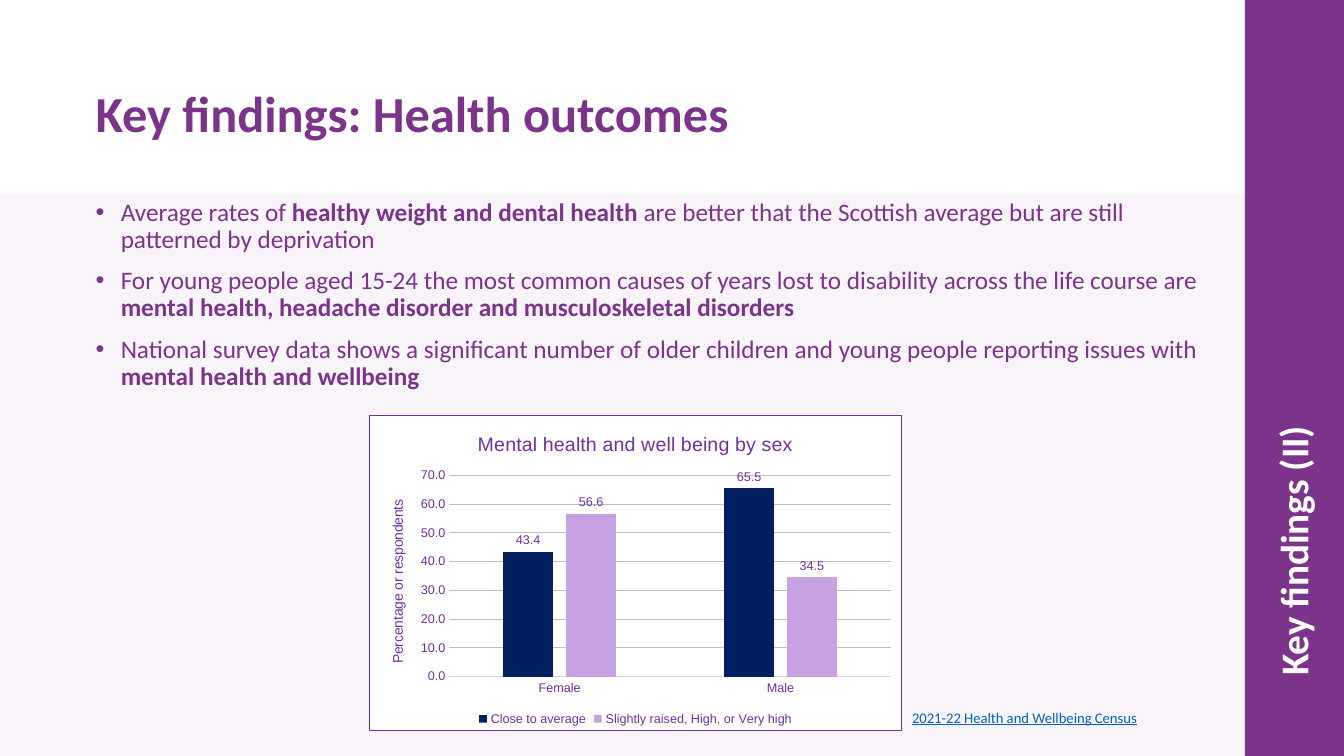
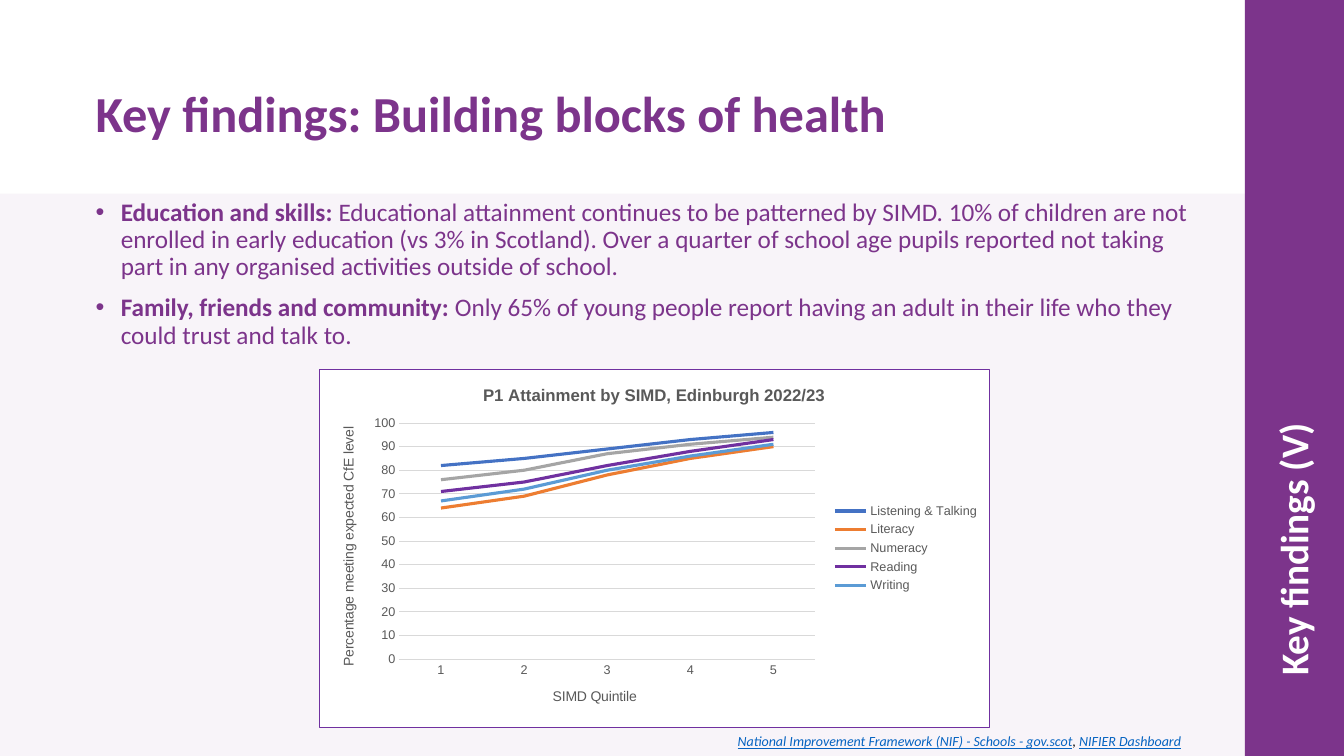
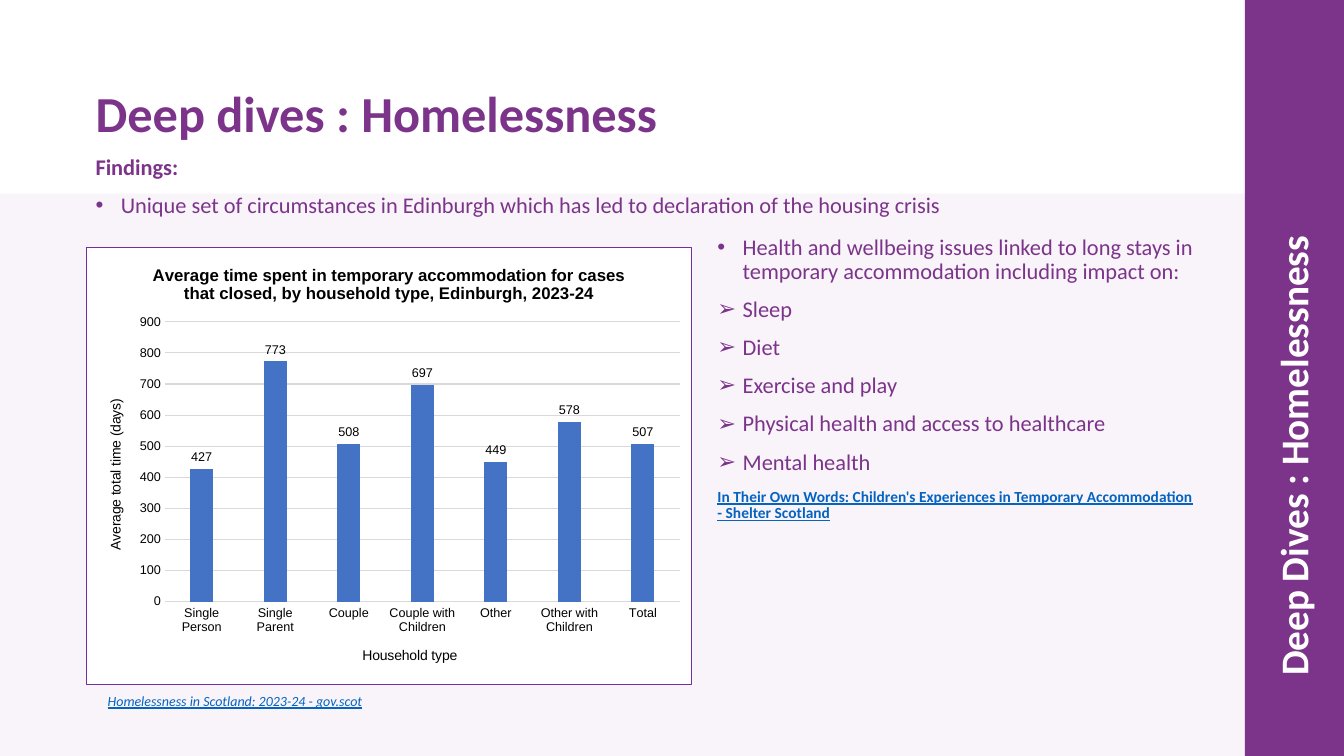
from lxml.etree import SubElement
from pptx import Presentation
from pptx.chart.data import CategoryChartData
from pptx.dml.color import RGBColor
from pptx.enum.chart import XL_CHART_TYPE, XL_LABEL_POSITION, XL_LEGEND_POSITION, XL_TICK_MARK
from pptx.enum.shapes import MSO_SHAPE
from pptx.oxml import parse_xml
from pptx.oxml.ns import nsdecls, qn
from pptx.util import Inches, Pt

PLUM = RGBColor(0x7C, 0x34, 0x8B)
VIOLET = RGBColor(0x70, 0x30, 0xA0)
LILAC = RGBColor(0xC7, 0xA2, 0xE3)
NAVY = RGBColor(0x00, 0x20, 0x60)
BLUE = RGBColor(0x44, 0x72, 0xC4)
SKY = RGBColor(0x5B, 0x9B, 0xD5)
ORANGE = RGBColor(0xED, 0x7D, 0x31)
LINK_BLUE = RGBColor(0x05, 0x63, 0xC1)
DARK_GREY = RGBColor(0x59, 0x59, 0x59)
GREY = RGBColor(0xA5, 0xA5, 0xA5)
MID_GREY = RGBColor(0xBF, 0xBF, 0xBF)
PALE_GREY = RGBColor(0xD9, 0xD9, 0xD9)
BLACK = RGBColor(0, 0, 0)
WHITE = RGBColor(255, 255, 255)

COLUMNS, ROWS = 80, 45
MARGIN = 5.1
BULLET_INDENT = Inches(0.25)


def style_font(font, size=18, color=PLUM, bold=False, italic=False, underline=False, face="Calibri"):
    font.name, font.size = face, Pt(size)
    font.bold, font.italic, font.underline = bold, italic, underline
    font.color.rgb = color


def write(paragraph, text, bold=False, **style):
    for index, part in enumerate(text.split("**")):
        if part:
            run = paragraph.add_run()
            run.text = part
            style_font(run.font, bold=bold or index % 2 == 1, **style)


class Deck:
    def __init__(self):
        self.presentation = Presentation()
        self.presentation.slide_width = Inches(13.33)
        self.presentation.slide_height = Inches(7.5)
        self.slide = None

    def place(self, column, row, columns, rows):
        across = self.presentation.slide_width / COLUMNS
        down = self.presentation.slide_height / ROWS
        return [round(n) for n in (column * across, row * down, columns * across, rows * down)]

    def start(self, title, section):
        self.slide = self.presentation.slides.add_slide(self.presentation.slide_layouts[6])
        self.band(74.1, 0, 5.9, 45)
        self.band(0, 11.52, 74.94, 33.48, opacity=5)
        self.text([title], MARGIN, 4.98, 64.62, 3.12, size=36, bold=True)
        side = self.text([section], 58.8, 21.12, 36.48, 2.94, size=28, color=WHITE, bold=True)
        side.rotation = 270

    def band(self, *area, opacity=100):
        band = self.slide.shapes.add_shape(MSO_SHAPE.RECTANGLE, *self.place(*area))
        band.shadow.inherit = False
        band.fill.solid()
        band.fill.fore_color.rgb = PLUM
        band.line.fill.background()
        if opacity < 100:
            color = band.element.spPr.find(".//" + qn("a:srgbClr"))
            SubElement(color, qn("a:alpha"), val=str(opacity * 1000))

    def frame(self, *area):
        box = self.slide.shapes.add_textbox(*self.place(*area))
        box.text_frame.word_wrap = True
        return box

    def text(self, lines, *area, **style):
        box = self.frame(*area)
        for index, line in enumerate(lines):
            paragraph = box.text_frame.add_paragraph() if index else box.text_frame.paragraphs[0]
            paragraph.line_spacing = 0.9
            if index:
                paragraph.space_before = Pt(10)
            line, line_style = line if isinstance(line, tuple) else (line, {})
            if line[0] in "•➢":
                properties = paragraph._p.get_or_add_pPr()
                properties.set("marL", str(BULLET_INDENT))
                properties.set("indent", str(-BULLET_INDENT))
                SubElement(properties, qn("a:buFont"), typeface="Arial")
                SubElement(properties, qn("a:buChar"), char=line[0])
                line = line[2:]
            write(paragraph, line, **{**style, **line_style})
        return box

    def sources(self, names, column, row, columns, size=10, italic=True):
        paragraph = self.frame(column, row, columns, 1.62).text_frame.paragraphs[0]
        for index, name in enumerate(names):
            if index:
                write(paragraph, ", ", size=size, color=BLACK, italic=italic)
            write(paragraph, name, size=size, color=LINK_BLUE, italic=italic, underline=True)

    def chart(self, kind, area, plot_area, title, categories, series, color,
              title_size=12, title_bold=True, value_title="", category_title="",
              number_format="General", grid=PALE_GREY, top=None, legend=None):
        data = CategoryChartData()
        data.categories = categories
        for name, values, _ in series:
            data.add_series(name, values)
        chart = self.slide.shapes.add_chart(kind, *self.place(*area), data).chart
        style_font(chart.font, size=10, color=color, face="Arial")
        chart.has_title = True
        write(chart.chart_title.text_frame.paragraphs[0], title,
              size=title_size, bold=title_bold, color=color, face="Arial")
        self.chart_area(chart, plot_area)
        self.axis(chart.category_axis, category_title, color)
        self.axis(chart.value_axis, value_title, color, turn=True)
        chart.category_axis.format.line.color.rgb = PALE_GREY
        values_axis = chart.value_axis
        values_axis.format.line.fill.background()
        values_axis.has_major_gridlines = True
        values_axis.major_gridlines.format.line.color.rgb = grid
        values_axis.major_gridlines.format.line.width = Pt(0.75)
        values_axis.tick_labels.number_format = number_format
        values_axis.tick_labels.number_format_is_linked = False
        if top:
            values_axis.minimum_scale, values_axis.maximum_scale = 0, top
        chart.has_legend = legend is not None
        if legend is not None:
            chart.legend.position = legend
            chart.legend.include_in_layout = False
            style_font(chart.legend.font, size=9, color=color, face="Arial")
        plot = chart.plots[0]
        plot.vary_by_categories = False
        if kind == XL_CHART_TYPE.LINE:
            for line, (_, _, shade) in zip(plot.series, series):
                line.smooth = False
                line.format.line.color.rgb = shade
                line.format.line.width = Pt(2.25)
            return
        plot.gap_width, plot.overlap = 219, -27
        for bars, (_, _, shade) in zip(plot.series, series):
            bars.format.fill.solid()
            bars.format.fill.fore_color.rgb = shade
        plot.has_data_labels = True
        labels = plot.data_labels
        labels.show_value = True
        labels.position = XL_LABEL_POSITION.OUTSIDE_END
        labels.number_format, labels.number_format_is_linked = number_format, False
        style_font(labels.font, size=9, color=color, face="Arial")

    def axis(self, axis, title, color, turn=False):
        axis.major_tick_mark = axis.minor_tick_mark = XL_TICK_MARK.NONE
        style_font(axis.tick_labels.font, size=9, color=color, face="Arial")
        axis.has_title = bool(title)
        if title:
            write(axis.axis_title.text_frame.paragraphs[0], title, size=10, color=color, face="Arial")
            if turn:
                body = axis.axis_title.element.find(".//" + qn("a:bodyPr"))
                body.set("rot", "-5400000")
                body.set("vert", "horz")

    def chart_area(self, chart, plot_area):
        chart.element.find(qn("c:chart")).addnext(parse_xml(
            f'<c:spPr {nsdecls("c", "a")}>'
            f'<a:solidFill><a:srgbClr val="{WHITE}"/></a:solidFill>'
            f'<a:ln w="{Pt(0.75)}"><a:solidFill><a:srgbClr val="{VIOLET}"/></a:solidFill></a:ln>'
            '</c:spPr>'))
        plot = chart.element.find(".//" + qn("c:plotArea"))
        for automatic in plot.findall(qn("c:layout")):
            plot.remove(automatic)
        layout = SubElement(plot, qn("c:layout"))
        plot.insert(0, layout)
        manual = SubElement(layout, qn("c:manualLayout"))
        settings = [("layoutTarget", "inner"), ("xMode", "edge"), ("yMode", "edge")]
        for tag, value in settings + list(zip("xywh", plot_area)):
            SubElement(manual, qn("c:" + tag), val=str(value))


def health_outcomes(deck):
    deck.start("Key findings: Health outcomes", "Key findings (II)")
    deck.text([
        "• Average rates of **healthy weight and dental health **are better that the Scottish average "
        "but are still patterned by deprivation",
        "• For young people aged 15-24 the most common causes of years lost to disability across the "
        "life course are **mental health, headache disorder and musculoskeletal disorders**",
        "• National survey data shows a significant number of older children and young people "
        "reporting issues with **mental health and wellbeing**",
    ], MARGIN, 11.58, 67.68, 31.8)
    deck.chart(
        XL_CHART_TYPE.COLUMN_CLUSTERED, (21.96, 24.72, 31.74, 18.78), (0.15, 0.19, 0.83, 0.64),
        "Mental health and well being by sex", ["Female", "Male"],
        [("Close to average", (43.4, 65.5), NAVY),
         ("Slightly raised, High, or Very high", (56.6, 34.5), LILAC)],
        VIOLET, title_size=14, title_bold=False, value_title="Percentage or respondents",
        number_format="0.0", grid=MID_GREY, legend=XL_LEGEND_POSITION.BOTTOM)
    deck.sources(["2021-22 Health and Wellbeing Census"], 53.7, 41.88, 18, size=10.5, italic=False)


def building_blocks(deck):
    deck.start("Key findings: Building blocks of health", "Key findings (V)")
    deck.text([
        "• **Education and skills: **Educational attainment continues to be patterned by SIMD. "
        "10% of children are not enrolled in early education (vs 3% in Scotland). Over a quarter of "
        "school age pupils reported not taking part in any organised activities outside of school.",
        "• **Family, friends and community: **Only 65% of young people report having an adult in "
        "their life who they could trust and talk to.",
    ], MARGIN, 11.58, 67.68, 31.8)
    deck.chart(
        XL_CHART_TYPE.LINE, (18.96, 21.96, 39.96, 21.36), (0.12, 0.15, 0.62, 0.66),
        "P1 Attainment by SIMD, Edinburgh 2022/23", ["1", "2", "3", "4", "5"],
        [("Listening & Talking", (82, 85, 89, 93, 96), BLUE),
         ("Literacy", (64, 69, 78, 85, 90), ORANGE),
         ("Numeracy", (76, 80, 87, 91, 94), GREY),
         ("Reading", (71, 75, 82, 88, 93), VIOLET),
         ("Writing", (67, 72, 80, 86, 91), SKY)],
        DARK_GREY, value_title="Percentage meeting expected CfE level",
        category_title="SIMD Quintile", top=100, legend=XL_LEGEND_POSITION.RIGHT)
    deck.sources(["National Improvement Framework (NIF) - Schools - gov.scot", "NIFIER Dashboard"],
                 43.32, 43.32, 30)


def homelessness(deck):
    deck.start("Deep dives : Homelessness", "Deep Dives : Homelessness")
    deck.text([
        "**Findings:**",
        "• Unique set of circumstances in Edinburgh which has led to declaration of the housing crisis",
    ], MARGIN, 9, 67.68, 5, size=16)
    deck.chart(
        XL_CHART_TYPE.COLUMN_CLUSTERED, (MARGIN, 14.7, 36.12, 26.1), (0.13, 0.17, 0.85, 0.64),
        "Average time spent in temporary accommodation for cases that closed, by household type, "
        "Edinburgh, 2023-24",
        ["Single Person", "Single Parent", "Couple", "Couple with Children", "Other",
         "Other with Children", "Total"],
        [("Series 1", (427, 773, 508, 697, 449, 578, 507), BLUE)],
        BLACK, value_title="Average total time (days)", category_title="Household type",
        number_format="#,##0")
    deck.text([
        "• Health and wellbeing issues linked to long stays in temporary accommodation "
        "including impact on:",
        "➢ Sleep",
        "➢ Diet",
        "➢ Exercise and play",
        "➢ Physical health and access to healthcare",
        "➢ Mental health",
        ("In Their Own Words: Children's Experiences in Temporary Accommodation - Shelter Scotland",
         {"size": 11, "color": LINK_BLUE, "bold": True, "underline": True}),
    ], 42.12, 13.74, 29.7, 27)
    for paragraph in deck.slide.shapes[-1].text_frame.paragraphs[:-1]:
        for run in paragraph.runs:
            run.font.size = Pt(16)
    deck.sources(["Homelessness in Scotland: 2023-24 - gov.scot"], 5.82, 40.92, 39.96)


def main():
    deck = Deck()
    health_outcomes(deck)
    building_blocks(deck)
    homelessness(deck)
    deck.presentation.save("out.pptx")


if __name__ == "__main__":
    main()
